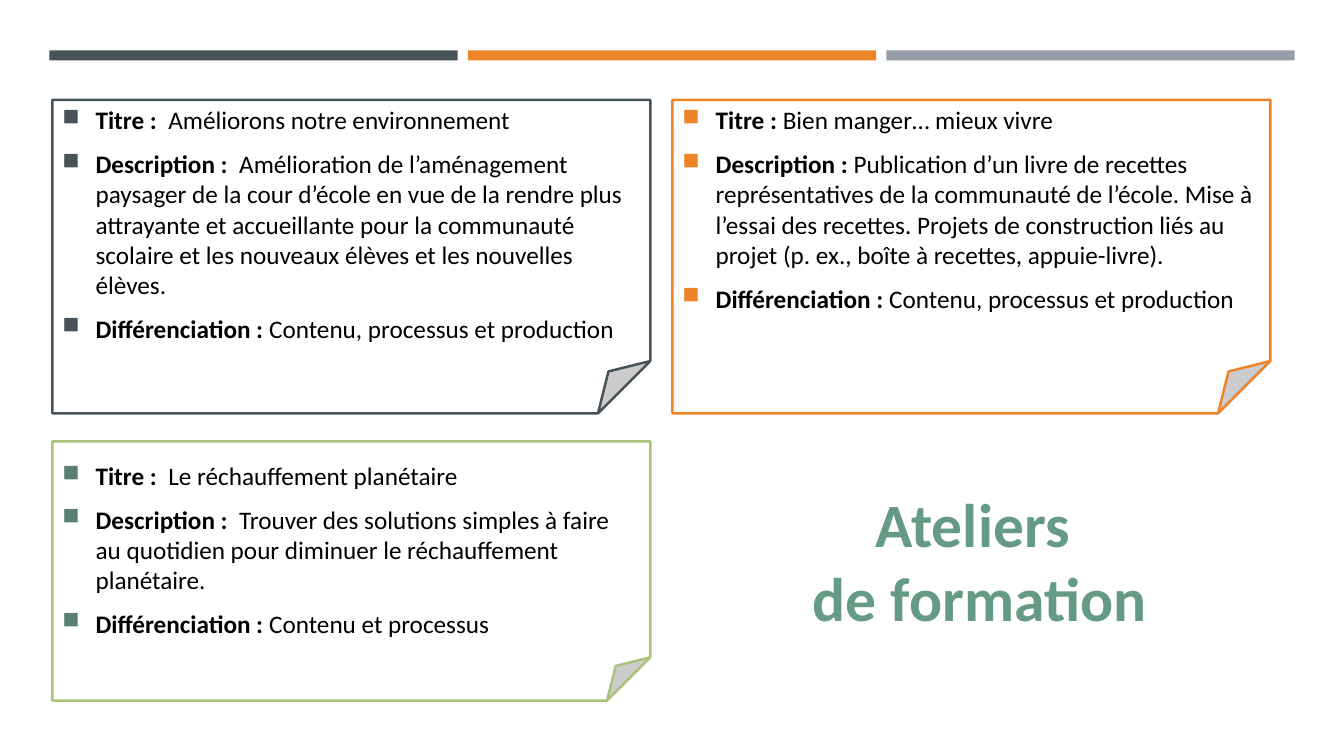
"""Build the slide of training workshops."""
from lxml import etree
from pptx import Presentation
from pptx import util as u
from pptx.dml.color import RGBColor
from pptx.enum import shapes, text
from pptx.oxml.ns import qn


def color(value):
    """Turn a hex string into a colour."""
    return RGBColor.from_string(value)


def add_span(para, words, size=18, bold=False, ink="000000", font="Calibri"):
    """Add formatted text to a paragraph."""
    span = para.add_run()
    span.text = words
    span.font.name = font
    span.font.size = u.Pt(size)
    span.font.bold = bold
    span.font.color.rgb = color(ink)


class WorkshopPage:
    """Hold the style and the current slide."""

    def __init__(self, page, indent=0.33, line_width=1.75):
        """Keep the slide and its shared measures."""
        self.page = page
        self.indent = u.Inches(indent)
        self.line_width = u.Pt(line_width)

    def shape(self, kind, place, fill):
        """Add a plain filled shape."""
        box = self.page.shapes.add_shape(kind, *map(u.Inches, place))
        box.shadow.inherit = False
        box.fill.solid()
        box.fill.fore_color.rgb = color(fill)
        box.line.fill.background()
        return box

    def bar(self, left, fill):
        """Add one bar of the top band."""
        self.shape(shapes.MSO_SHAPE.RECTANGLE, (left, 0.5, 4.05, 0.1), fill)

    def bullet(self, para, ink):
        """Give a paragraph a square bullet and its spacing."""
        para.alignment = text.PP_ALIGN.LEFT
        para.space_before = u.Pt(3.6)
        para.space_after = u.Pt(6)
        props = para._p.get_or_add_pPr()
        props.set("marL", str(self.indent))
        props.set("indent", str(-self.indent))
        holder = etree.SubElement(props, qn("a:buClr"))
        etree.SubElement(holder, qn("a:srgbClr"), val=ink)
        etree.SubElement(props, qn("a:buSzPct"), val="92000")
        etree.SubElement(props, qn("a:buChar"), char="■")

    def card(self, place, line, bullet, entries, anchor=text.MSO_ANCHOR.TOP):
        """Add a folded card with labelled entries."""
        box = self.shape(shapes.MSO_SHAPE.FOLDED_CORNER, place, "FFFFFF")
        box.line.color.rgb = color(line)
        box.line.width = self.line_width
        frame = box.text_frame
        frame.word_wrap = True
        frame.vertical_anchor = anchor
        for index, (label, words) in enumerate(entries):
            para = frame.add_paragraph() if index else frame.paragraphs[0]
            self.bullet(para, bullet)
            add_span(para, label, bold=True)
            add_span(para, words)

    def title(self, place, lines):
        """Add the large centred title."""
        box = self.page.shapes.add_textbox(*map(u.Inches, place))
        frame = box.text_frame
        frame.word_wrap = False
        frame.auto_size = text.MSO_AUTO_SIZE.SHAPE_TO_FIT_TEXT
        for index, words in enumerate(lines):
            para = frame.add_paragraph() if index else frame.paragraphs[0]
            para.alignment = text.PP_ALIGN.CENTER
            add_span(para, words, size=44, bold=True, ink="659B84")


def main():
    """Build and save the deck."""
    deck = Presentation()
    deck.slide_width, deck.slide_height = u.Inches(13.33), u.Inches(7.5)
    workshop = WorkshopPage(deck.slides.add_slide(deck.slide_layouts[6]))

    for index, fill in enumerate(("465359", "ED8428", "969FA7")):
        workshop.bar(0.49 + 4.15 * index, fill)

    workshop.card((0.52, 0.99, 5.93, 3.11), "465359", "465359", [
        ("Titre :  ", "Améliorons notre environnement"),
        ("Description :  ",
         "Amélioration de l’aménagement paysager de la cour d’école en vue "
         "de la rendre plus attrayante et accueillante pour la communauté "
         "scolaire et les nouveaux élèves et les nouvelles élèves."),
        ("Différenciation : ", "Contenu, processus et production"),
    ])
    workshop.card((0.52, 4.38, 5.93, 2.57), "A9C37C", "5A8071", [
        ("Titre :  ", "Le réchauffement planétaire"),
        ("Description :  ",
         "Trouver des solutions simples à faire au quotidien pour diminuer "
         "le réchauffement planétaire."),
        ("Différenciation : ", "Contenu et processus"),
    ], anchor=text.MSO_ANCHOR.MIDDLE)
    workshop.card((6.67, 0.99, 5.93, 3.11), "ED8428", "ED8428", [
        ("Titre : ", "Bien manger… mieux vivre"),
        ("Description : ",
         "Publication d’un livre de recettes représentatives de la "
         "communauté de l’école. Mise à l’essai des recettes. Projets de "
         "construction liés au projet (p. ex., boîte à recettes, "
         "appuie-livre)."),
        ("Différenciation : ", "Contenu, processus et production"),
    ])
    workshop.title((7.74, 4.77, 3.96, 1.58), ["Ateliers ", "de formation"])
    deck.save("out.pptx")


if __name__ == "__main__":
    main()
